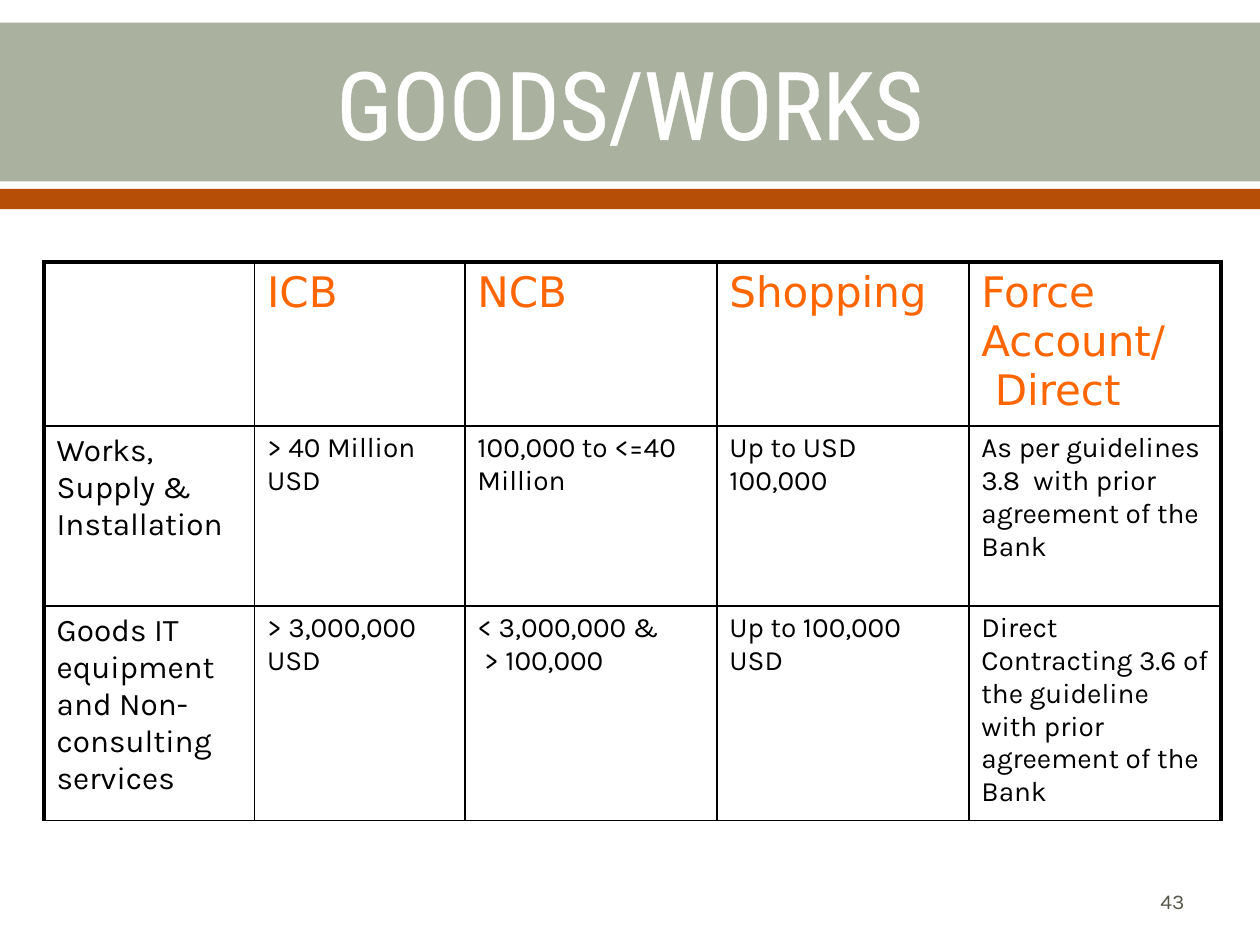
from dataclasses import dataclass

from lxml import etree
from pptx import Presentation
from pptx.dml.color import RGBColor
from pptx.enum.shapes import MSO_SHAPE
from pptx.enum.text import MSO_ANCHOR, PP_ALIGN
from pptx.oxml.ns import qn
from pptx.util import Inches, Pt

RECT = MSO_SHAPE.RECTANGLE
MIDDLE = MSO_ANCHOR.MIDDLE
CENTER, RIGHT = PP_ALIGN.CENTER, PP_ALIGN.RIGHT

COLORS = {"sage": "ABB19F", "rust": "B74E08", "white": "FFFFFF",
          "orange": "FF6600", "black": "000000", "gray": "55554A"}
WIDTHS = [1.67, 1.67, 2, 2, 2]
HEIGHTS = [1.3, 1.43, 1.7]
THIN, THICK = 1, 2.25
ROWS = [
    ["", "ICB", "NCB", "Shopping", "Force Account/\v Direct"],
    ["Works, Supply & Installation", "> 40 Million USD",
     "100,000 to <=40 Million", "Up to USD 100,000",
     "As per guidelines 3.8  with prior agreement of the Bank"],
    ["Goods IT equipment and Non-consulting services", "> 3,000,000 USD",
     "< 3,000,000 &\n > 100,000", "Up to 100,000 USD",
     "Direct Contracting 3.6 of the guideline with prior agreement "
     "of the Bank"],
]


@dataclass
class Style:
    font: str
    size: float
    color: str


@dataclass
class Band:
    top: float
    height: float
    color: str


@dataclass
class Label:
    text: str
    box: tuple
    align: PP_ALIGN
    style: Style


HEAD = Style("DejaVu Sans", 24, "orange")
SIDE = Style("Karla", 18, "black")
BODY = Style("Karla", 16, "black")
BANDS = [Band(0.18, 1.26, "sage"), Band(1.5, 0.16, "rust")]
TITLE = Label("GOODS/WORKS", (0.5, 0.2, 9, 1.22), CENTER,
              Style("Roboto Condensed", 54, "white"))
NUMBER = Label("43", (7.17, 6.95, 2.33, 0.4), RIGHT,
               Style("Karla", 12, "gray"))


def rgb(name: str) -> RGBColor:
    return RGBColor.from_string(COLORS[name])


def add_line(parent, tag: str, width: float, color: str):
    """Append a solid line element, such as a cell edge or text outline."""
    line = etree.SubElement(parent, qn(tag), w=str(Pt(width)))
    fill = etree.SubElement(line, qn("a:solidFill"))
    etree.SubElement(fill, qn("a:srgbClr"), val=COLORS[color])
    return line


def set_text(frame, text: str, style: Style) -> None:
    frame.text = text
    for para in frame.paragraphs:
        for run in para.runs:
            run.font.name = style.font
            run.font.size = Pt(style.size)
            run.font.color.rgb = rgb(style.color)


def add_band(slide, band: Band) -> None:
    shape = slide.shapes.add_shape(RECT, 0, Inches(band.top), Inches(10),
                                   Inches(band.height))
    shape.shadow.inherit = False
    shape.fill.solid()
    shape.fill.fore_color.rgb = rgb(band.color)
    shape.line.fill.background()


def add_label(slide, label: Label):
    frame = slide.shapes.add_textbox(*map(Inches, label.box)).text_frame
    frame.word_wrap = True
    frame.vertical_anchor = MIDDLE
    set_text(frame, label.text, label.style)
    frame.paragraphs[0].alignment = label.align
    return frame


def add_grid(slide) -> None:
    """Draw the table with thick left, top and right outer edges."""
    table = slide.shapes.add_table(
        len(ROWS), len(WIDTHS), Inches(0.35), Inches(2.08),
        Inches(sum(WIDTHS)), Inches(sum(HEIGHTS))).table
    table.first_row = table.horz_banding = False
    for col, width in zip(table.columns, WIDTHS):
        col.width = Inches(width)
    for row, height in zip(table.rows, HEIGHTS):
        row.height = Inches(height)
    last = len(WIDTHS) - 1
    for r, texts in enumerate(ROWS):
        for c, text in enumerate(texts):
            cell = table.cell(r, c)
            style = HEAD if r == 0 else SIDE if c == 0 else BODY
            set_text(cell.text_frame, text, style)
            props = cell._tc.get_or_add_tcPr()
            edges = {"L": c == 0, "R": c == last, "T": r == 0, "B": False}
            for side, outer in edges.items():
                add_line(props, f"a:ln{side}", THICK if outer else THIN,
                         "black")
            cell.fill.background()


def main() -> None:
    deck = Presentation()
    deck.slide_width, deck.slide_height = Inches(10), Inches(7.5)
    slide = deck.slides.add_slide(deck.slide_layouts[6])
    for band in BANDS:
        add_band(slide, band)
    title = add_label(slide, TITLE)
    props = title.paragraphs[0].runs[0].font._element
    props.insert(0, add_line(props, "a:ln", 1.1, "white"))
    add_grid(slide)
    add_label(slide, NUMBER)
    deck.save("out.pptx")


if __name__ == "__main__":
    main()
